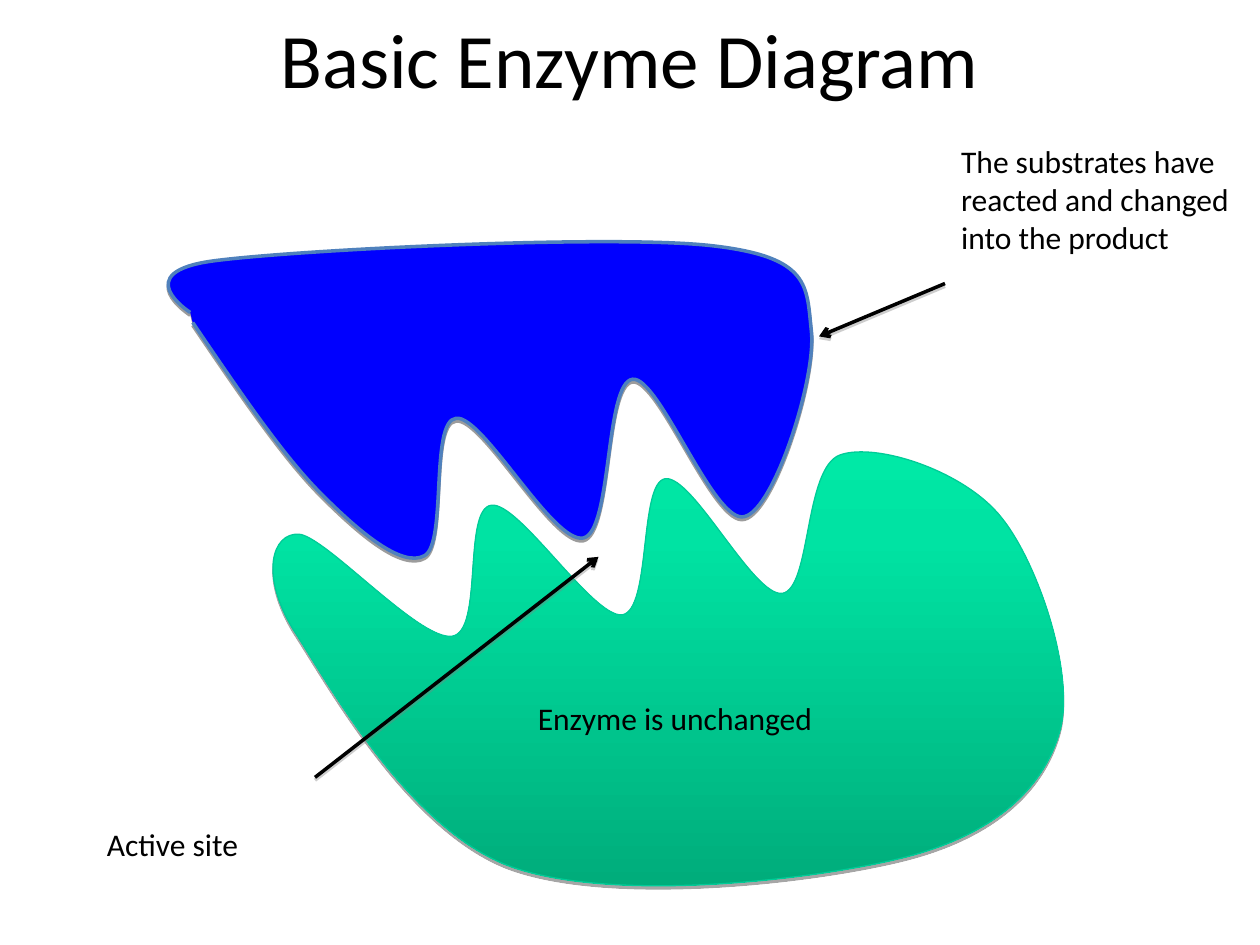
from dataclasses import dataclass
from typing import NamedTuple

from lxml.etree import SubElement
from pptx import Presentation
from pptx.dml.color import RGBColor
from pptx.enum.shapes import MSO_CONNECTOR
from pptx.enum.text import MSO_ANCHOR, PP_ALIGN
from pptx.oxml.ns import qn
from pptx.util import Inches, Pt

Point = tuple[float, float]


@dataclass(frozen=True)
class Theme:
    font: str = "Calibri"
    title_size: int = 44
    label_size: int = 18
    ink: str = "000000"
    product: str = "0000FF"
    product_line: str = "4F81BD"
    enzyme_line: str = "00CC98"
    enzyme_stops: tuple = ((0, "00E9A6"), (20, "00E3A3"), (100, "00AD7B"))


class Box(NamedTuple):
    left: float
    top: float
    width: float
    height: float


class Label(NamedTuple):
    text: str
    box: Box


class Arrow(NamedTuple):
    start: Point
    end: Point


class Shadow(NamedTuple):
    color: str
    opacity: int
    distance: float


class Blob(NamedTuple):
    box: Box
    start: Point
    curves: tuple  # each curve: two control points and an end point
    closed: bool
    line_color: str
    line_width: float
    shadow: Shadow


THEME = Theme()
ARROW_SHADOW = Shadow("808080", 38, 1.6)

ENZYME = Blob(
    Box(2.17, 3.58, 6.27, 3.44), (2.37, 4.24),
    (
        ((2.16, 4.23), (2.06, 4.56), (2.33, 5)),
        ((2.61, 5.43), (3.23, 6.56), (4.03, 6.87)),
        ((4.83, 7.17), (6.43, 6.99), (7.16, 6.81)),
        ((7.89, 6.63), (8.28, 6.26), (8.41, 5.81)),
        ((8.54, 5.36), (8.24, 4.47), (7.95, 4.11)),
        ((7.66, 3.74), (6.96, 3.51), (6.67, 3.61)),
        ((6.38, 3.71), (6.44, 4.67), (6.21, 4.71)),
        ((5.98, 4.74), (5.5, 3.77), (5.28, 3.8)),
        ((5.07, 3.83), (5.17, 4.84), (4.94, 4.88)),
        ((4.71, 4.91), (4.12, 3.98), (3.9, 4.01)),
        ((3.67, 4.04), (3.84, 5.01), (3.59, 5.05)),
        ((3.33, 5.09), (2.58, 4.25), (2.37, 4.24)),
    ),
    True, THEME.enzyme_line, 0.75, Shadow("000000", 35, 1.8),
)
PRODUCT = Blob(
    Box(1.33, 1.92, 5.11, 2.51), (1.53, 2.56),
    (
        ((1.89, 3.09), (2.24, 3.61), (2.55, 3.92)),
        ((2.85, 4.22), (3.19, 4.51), (3.37, 4.41)),
        ((3.55, 4.31), (3.41, 3.34), (3.62, 3.32)),
        ((3.83, 3.29), (4.39, 4.32), (4.63, 4.27)),
        ((4.86, 4.22), (4.8, 3.04), (5.02, 3.01)),
        ((5.23, 2.98), (5.67, 4.17), (5.91, 4.1)),
        ((6.15, 4.04), (6.48, 2.99), (6.44, 2.63)),
        ((6.4, 2.27), (6.44, 2.04), (5.65, 1.95)),
        ((4.86, 1.86), (2.39, 1.98), (1.7, 2.07)),
        ((1.01, 2.16), (1.51, 2.48), (1.51, 2.48)),
    ),
    False, THEME.product_line, 2, Shadow("000000", 38, 1.6),
)
ARROWS = (Arrow((7.5, 2.25), (6.5, 2.67)), Arrow((2.5, 6.17), (4.75, 4.42)))
LABELS = (
    Label("Active site", Box(0.75, 6.5, 2.92, 0.51)),
    Label("The substrates have reacted and changed into the product",
          Box(7.53, 1.08, 2.5, 1.72)),
    Label("Enzyme is unchanged", Box(4.17, 5.5, 2.92, 0.91)),
)


def place(shape, box: Box) -> None:
    shape.left, shape.top, shape.width, shape.height = map(Inches, box)


def style_text(text_frame, size: int) -> None:
    text_frame.word_wrap = True
    for paragraph in text_frame.paragraphs:
        for run in paragraph.runs:
            run.font.name = THEME.font
            run.font.size = Pt(size)
            run.font.color.rgb = RGBColor.from_string(THEME.ink)


def style_line(shape, color: str, width: float) -> None:
    shape.line.color.rgb = RGBColor.from_string(color)
    shape.line.width = Pt(width)


def add_color(parent, color: str):
    return SubElement(parent, qn("a:srgbClr"), val=color)


def add_shadow(shape, shadow: Shadow) -> None:
    effects = SubElement(shape._element.spPr, qn("a:effectLst"))
    outer = SubElement(effects, qn("a:outerShdw"), blurRad="0",
                       dist=str(Pt(shadow.distance)), dir="5400000", rotWithShape="0")
    SubElement(add_color(outer, shadow.color), qn("a:alpha"),
               val=str(shadow.opacity * 1000))


def add_blob(slide, blob: Blob):
    left, top, width, height = blob.box
    builder = slide.shapes.build_freeform(left, top, scale=Inches(1))
    builder.add_line_segments([(left + width, top + height)], close=False)
    shape = builder.convert_to_shape()
    place(shape, blob.box)

    # Replace the straight diagonal with the smooth outline
    outline = next(shape._element.iter(qn("a:path")))
    for segment in list(outline):
        outline.remove(segment)
    outline.set("w", str(Inches(width)))
    outline.set("h", str(Inches(height)))

    def add_segment(tag: str, points) -> None:
        segment = SubElement(outline, qn(tag))
        for x, y in points:
            SubElement(segment, qn("a:pt"), x=str(Inches(x - left)), y=str(Inches(y - top)))

    add_segment("a:moveTo", [blob.start])
    for curve in blob.curves:
        add_segment("a:cubicBezTo", curve)
    if blob.closed:
        SubElement(outline, qn("a:close"))

    style_line(shape, blob.line_color, blob.line_width)
    add_shadow(shape, blob.shadow)
    return shape


def fill_gradient(shape, stops: tuple) -> None:
    shape.fill.gradient()
    shape.fill.gradient_angle = 270
    stop_list = next(shape._element.iter(qn("a:gsLst")))
    for stop in list(stop_list):
        stop_list.remove(stop)
    for position, color in stops:
        add_color(SubElement(stop_list, qn("a:gs"), pos=str(position * 1000)), color)


def add_arrow(slide, arrow: Arrow) -> None:
    connector = slide.shapes.add_connector(
        MSO_CONNECTOR.STRAIGHT, *map(Inches, arrow.start + arrow.end))
    style_line(connector, THEME.ink, 2)
    SubElement(connector._element.spPr.find(qn("a:ln")), qn("a:tailEnd"), type="arrow")
    add_shadow(connector, ARROW_SHADOW)


def add_label(slide, label: Label) -> None:
    text_frame = slide.shapes.add_textbox(*map(Inches, label.box)).text_frame
    text_frame.text = label.text
    style_text(text_frame, THEME.label_size)


def main() -> None:
    presentation = Presentation()
    presentation.slide_width, presentation.slide_height = Inches(10), Inches(7.5)
    slide = presentation.slides.add_slide(presentation.slide_layouts[5])

    # Title
    title = slide.shapes.title
    place(title, Box(0.75, 0, 8.5, 0.92))
    title.text_frame.text = "Basic Enzyme Diagram"
    title.text_frame.vertical_anchor = MSO_ANCHOR.MIDDLE
    title.text_frame.paragraphs[0].alignment = PP_ALIGN.CENTER
    style_text(title.text_frame, THEME.title_size)

    # Enzyme, then its arrows and labels
    fill_gradient(add_blob(slide, ENZYME), THEME.enzyme_stops)
    for arrow in ARROWS:
        add_arrow(slide, arrow)
    for label in LABELS:
        add_label(slide, label)

    # Product in front
    product = add_blob(slide, PRODUCT)
    product.fill.solid()
    product.fill.fore_color.rgb = RGBColor.from_string(THEME.product)

    presentation.save("out.pptx")


if __name__ == "__main__":
    main()
